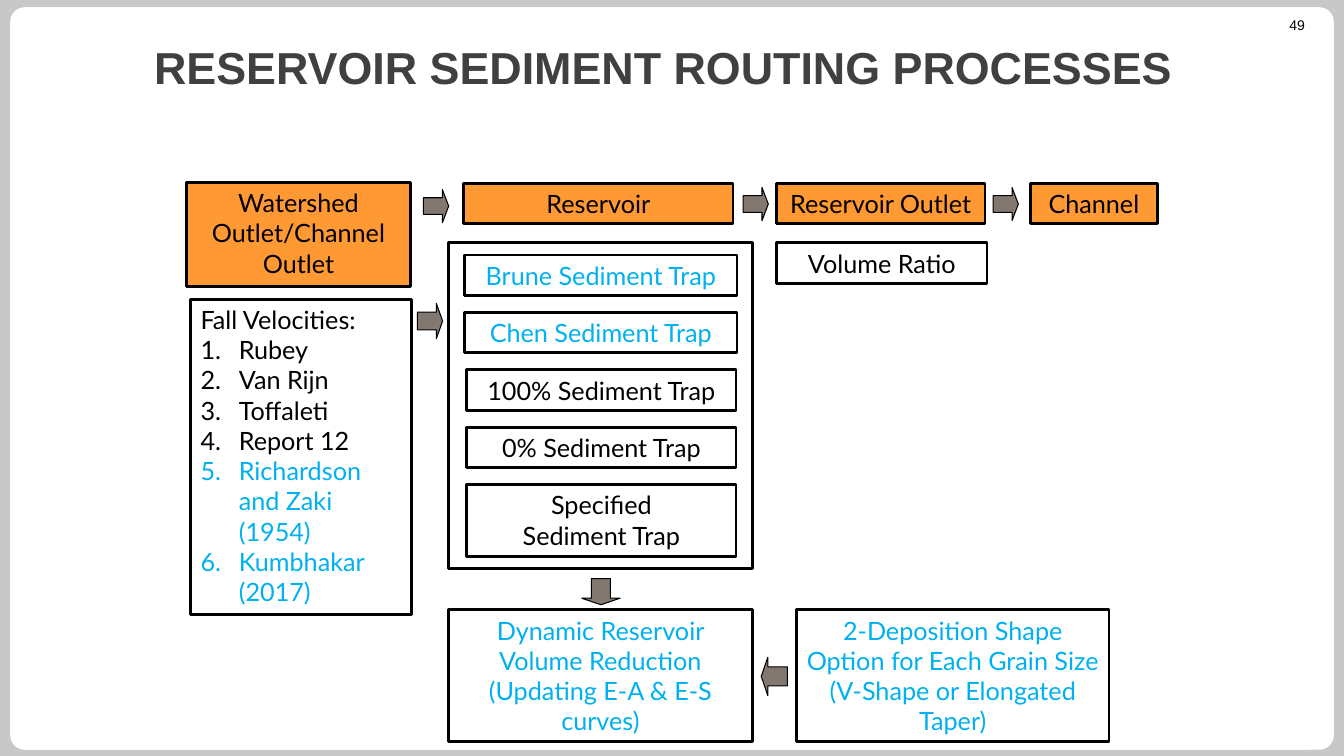
"""Build the reservoir sediment routing slide."""
from lxml import etree
from pptx import Presentation
from pptx.dml.color import RGBColor
from pptx.enum.shapes import MSO_SHAPE
from pptx.enum.text import MSO_ANCHOR, MSO_AUTO_SIZE, PP_ALIGN
from pptx.oxml.ns import qn
from pptx.util import Inches, Pt

RECT, ROUND = MSO_SHAPE.RECTANGLE, MSO_SHAPE.ROUNDED_RECTANGLE
EAST, SOUTH = MSO_SHAPE.RIGHT_ARROW, MSO_SHAPE.DOWN_ARROW
TOP, MIDDLE = MSO_ANCHOR.TOP, MSO_ANCHOR.MIDDLE
LEFT, CENTER, RIGHT = PP_ALIGN.LEFT, PP_ALIGN.CENTER, PP_ALIGN.RIGHT
GROW = MSO_AUTO_SIZE.SHAPE_TO_FIT_TEXT

BLACK = RGBColor(0x00, 0x00, 0x00)
WHITE = RGBColor(0xFF, 0xFF, 0xFF)
GRAY = RGBColor(0xC8, 0xC8, 0xC8)
DARK = RGBColor(0x40, 0x40, 0x40)
ORANGE = RGBColor(0xFF, 0x99, 0x33)
BLUE = RGBColor(0x00, 0xB0, 0xF0)
TAUPE = RGBColor(0x82, 0x78, 0x6F)


class Board:
    """Hold the slide and its drawing style."""

    def __init__(self, slide):
        self.slide = slide
        self.font = "Lato"
        self.size = 18

    def shape(self, kind, at, fill, line, width):
        """Add a preset shape with its fill and outline."""
        item = self.slide.shapes.add_shape(kind, *map(Inches, at))
        item.shadow.inherit = False
        if fill is None:
            item.fill.background()
        else:
            item.fill.solid()
            item.fill.fore_color.rgb = fill
        item.line.color.rgb = line
        item.line.width = Pt(width)
        return item

    def style(self, para, color, align):
        """Set the body font and alignment of a paragraph."""
        para.alignment = align
        para.font.name = self.font
        para.font.size = Pt(self.size)
        para.font.color.rgb = color

    def box(self, at, text, color=BLACK, fill=None):
        """Add an outlined box with centred text."""
        frame = self.shape(RECT, at, fill, BLACK, 2).text_frame
        frame.word_wrap = True
        frame.auto_size = GROW
        frame.vertical_anchor = TOP
        para = frame.paragraphs[0]
        para.text = text
        self.style(para, color, CENTER)

    def steps(self, at, head, items):
        """Add an outlined box with a heading and a numbered list."""
        frame = self.shape(RECT, at, None, BLACK, 2).text_frame
        frame.word_wrap = True
        frame.auto_size = GROW
        frame.vertical_anchor = TOP
        for i, (text, color) in enumerate([(head, BLACK)] + items):
            para = frame.add_paragraph() if i else frame.paragraphs[0]
            para.text = text
            props = para._p.get_or_add_pPr()
            props.set("marL", str(Inches(0.38)))
            props.set("indent", str(-Inches(0.38)))
            if i:
                etree.SubElement(props, qn("a:buAutoNum"), type="arabicPeriod")
            self.style(para, color, LEFT)

    def arrow(self, kind, at, turn=0):
        """Add a block arrow."""
        item = self.shape(kind, at, TAUPE, BLACK, 0.75)
        item.adjustments[0] = 0.5
        item.adjustments[1] = 0.25
        item.rotation = turn

    def label(self, at, text, size, color, align, anchor, pad, bold=False):
        """Add free text in Arial."""
        frame = self.slide.shapes.add_textbox(*map(Inches, at)).text_frame
        frame.word_wrap = True
        frame.vertical_anchor = anchor
        frame.margin_top = frame.margin_bottom = Inches(pad)
        para = frame.paragraphs[0]
        para.text = text
        para.alignment = align
        para.font.name = "Arial"
        para.font.size = Pt(size)
        para.font.bold = bold
        para.font.color.rgb = color


def main():
    """Draw the slide and save it."""
    deck = Presentation()
    deck.slide_width, deck.slide_height = Inches(13.33), Inches(7.5)
    slide = deck.slides.add_slide(deck.slide_layouts[6])
    slide.background.fill.solid()
    slide.background.fill.fore_color.rgb = GRAY
    board = Board(slide)

    panel = board.shape(ROUND, (0.07, 0.04, 13.19, 7.43), WHITE, GRAY, 4.5)
    panel.adjustments[0] = 0.023
    board.label((12.2, 0.16, 0.84, 0.17), "49", 10, BLACK, RIGHT, TOP, 0)
    board.label((1.43, 0.04, 10.56, 1.25), "RESERVOIR SEDIMENT ROUTING PROCESSES",
                32, DARK, LEFT, MIDDLE, 0.05, True)

    stages = [
        (1.85, 1.81, 2.22, 1.03, "Watershed Outlet/Channel Outlet"),
        (4.6, 1.82, 2.67, 0.4, "Reservoir"),
        (7.7, 1.82, 2.07, 0.4, "Reservoir Outlet"),
        (10.22, 1.82, 1.26, 0.4, "Channel"),
    ]
    for *at, text in stages:
        board.box(at, text, fill=ORANGE)

    board.shape(RECT, (4.45, 2.41, 3.01, 3.23), None, BLACK, 2.25)
    traps = [
        (4.61, 2.7, 0.4, "Brune Sediment Trap", BLUE),
        (4.61, 2.7, 0.4, "Chen Sediment Trap", BLUE),
        (4.63, 2.67, 0.4, "100% Sediment Trap", BLACK),
        (4.63, 2.67, 0.4, "0% Sediment Trap", BLACK),
        (4.63, 2.67, 0.71, "Specified\vSediment Trap", BLACK),
    ]
    for i, (left, width, height, text, color) in enumerate(traps):
        board.box((left, 2.53 + 0.57 * i, width, height), text, color)

    board.box((7.7, 2.41, 2.09, 0.4), "Volume Ratio")
    board.box((4.45, 6.05, 3.01, 1.31),
              "Dynamic Reservoir Volume Reduction (Updating E-A & E-S curves)", BLUE)
    board.box((7.9, 6.05, 3.1, 1.31),
              "2-Deposition Shape Option for Each Grain Size "
              "(V-Shape or Elongated Taper)", BLUE)
    board.steps((1.89, 2.97, 2.19, 3.13), "Fall Velocities:", [
        ("Rubey", BLACK), ("Van Rijn", BLACK), ("Toffaleti", BLACK),
        ("Report 12", BLACK), ("Richardson and Zaki (1954)", BLUE),
        ("Kumbhakar (2017)", BLUE),
    ])

    for left, top, height in [(4.2, 1.88, 0.33), (7.37, 1.86, 0.33),
                              (9.85, 1.86, 0.33), (4.14, 3.01, 0.35)]:
        board.arrow(EAST, (left, top, 0.25, height))
    board.arrow(SOUTH, (5.77, 5.74, 0.38, 0.26))
    board.arrow(SOUTH, (7.49, 6.58, 0.38, 0.26), 90)
    deck.save("out.pptx")


if __name__ == "__main__":
    main()
